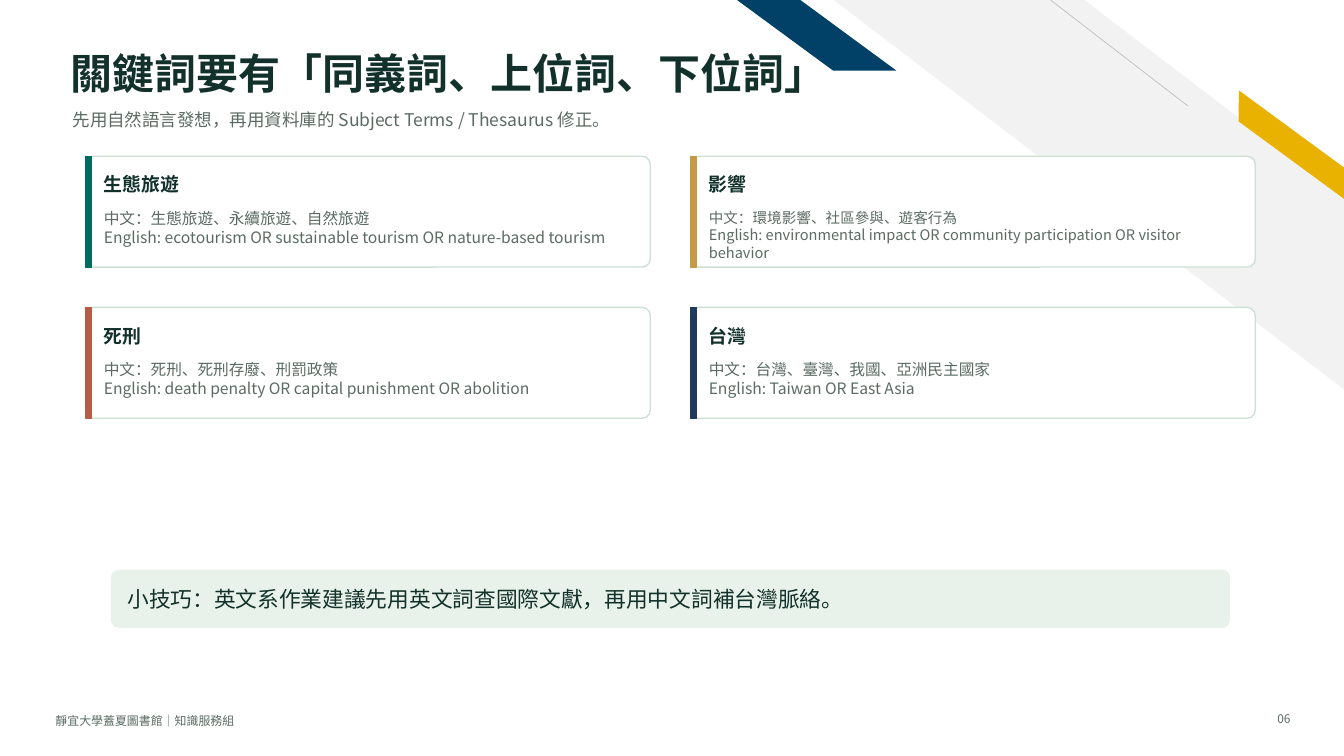
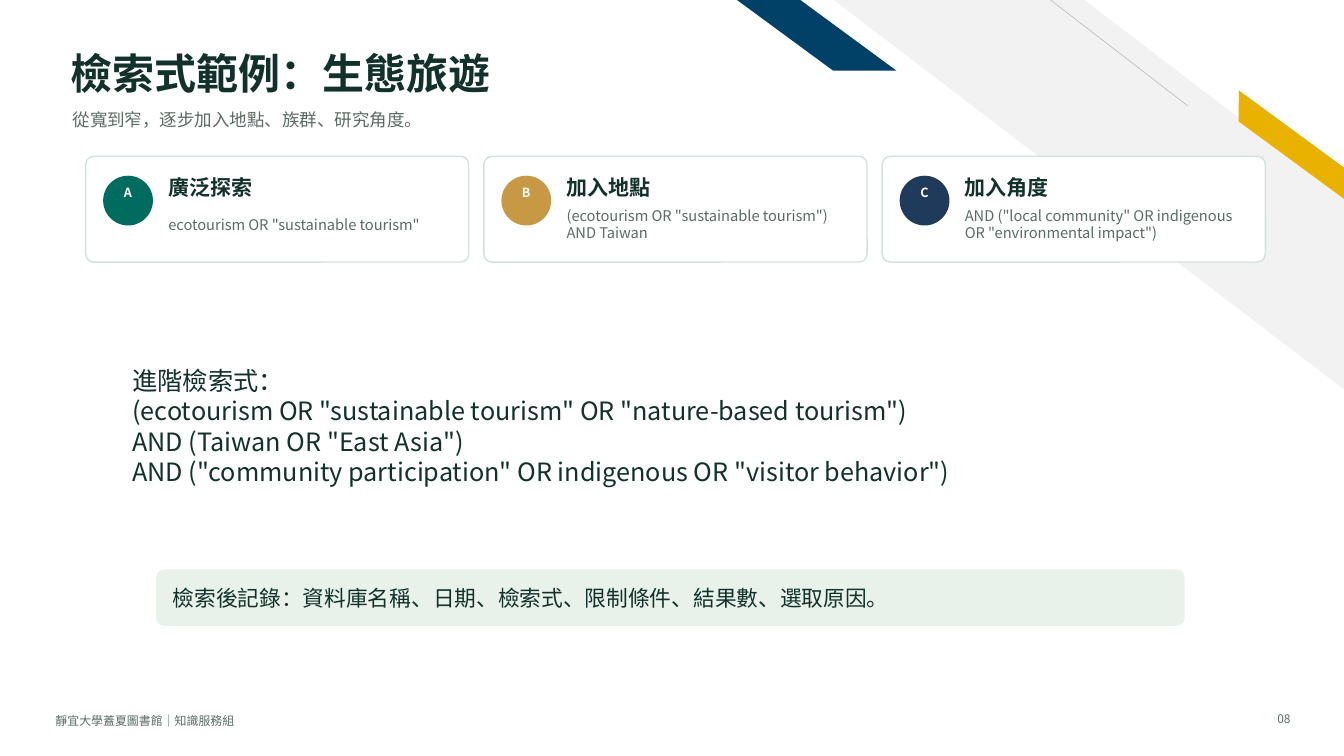
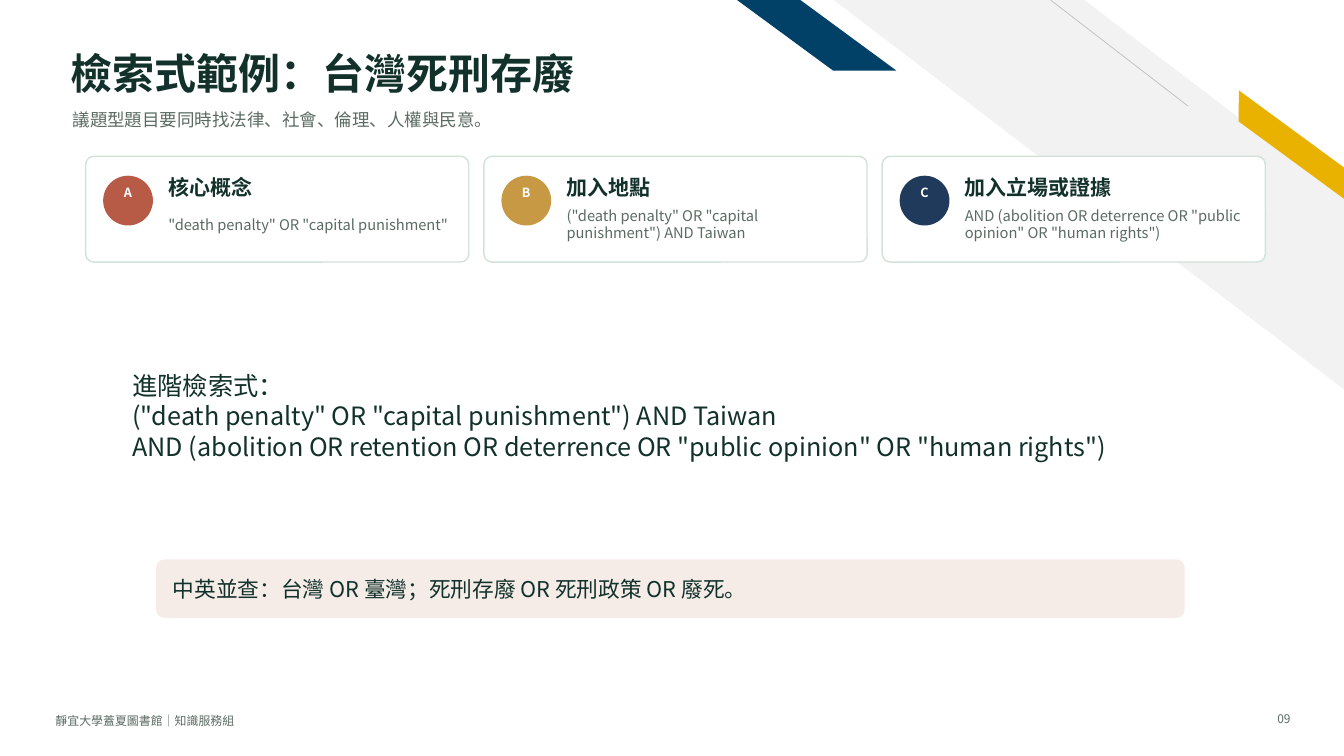
"""Build three slides on search keywords and example search expressions."""
from dataclasses import dataclass

from lxml.etree import SubElement
from pptx import Presentation
from pptx.dml.color import RGBColor
from pptx.enum.shapes import MSO_CONNECTOR, MSO_SHAPE, PP_PLACEHOLDER
from pptx.enum.text import MSO_ANCHOR, MSO_AUTO_SIZE, PP_ALIGN
from pptx.oxml.ns import qn
from pptx.shapes.autoshape import Shape
from pptx.slide import Slide
from pptx.util import Emu, Pt

PX = 9144
FONT = "Noto Sans CJK SC"
FOOTER = "靜宜大學蓋夏圖書館｜知識服務組"
RADIUS = 8

INK = RGBColor(0x12, 0x31, 0x2B)
MUTED = RGBColor(0x5B, 0x6B, 0x63)
WHITE = RGBColor(0xFF, 0xFF, 0xFF)
BORDER = RGBColor(0xCD, 0xE0, 0xD4)
TEAL = RGBColor(0x00, 0x6B, 0x5F)
OCHRE = RGBColor(0xC7, 0x99, 0x44)
BRICK = RGBColor(0xB7, 0x5B, 0x47)
INDIGO = RGBColor(0x1F, 0x3A, 0x5B)
MINT = RGBColor(0xE8, 0xF1, 0xEA)
BLUSH = RGBColor(0xF5, 0xEC, 0xE8)
STRIPE_GREY = RGBColor(0xF2, 0xF2, 0xF2)
HAIRLINE = RGBColor(0xBF, 0xBF, 0xBF)
GOLD = RGBColor(0xEA, 0xB2, 0x00)
NAVY = RGBColor(0x01, 0x40, 0x67)


@dataclass(frozen=True)
class Box:
    """A rectangle in px."""
    left: int
    top: int
    width: int
    height: int

    def emu(self) -> tuple[Emu, Emu, Emu, Emu]:
        """Return the rectangle in EMU."""
        return px(self.left), px(self.top), px(self.width), px(self.height)


@dataclass(frozen=True)
class Style:
    """The look of a text."""
    size: float
    color: RGBColor = INK
    bold: bool = False
    align: PP_ALIGN = PP_ALIGN.LEFT
    anchor: MSO_ANCHOR = MSO_ANCHOR.MIDDLE


@dataclass(frozen=True)
class Keyword:
    """A concept with its search terms in two languages."""
    name: str
    accent: RGBColor
    chinese: str
    english: str
    size: float = 11.2


@dataclass(frozen=True)
class Step:
    """One step of a search."""
    name: str
    accent: RGBColor
    terms: str


@dataclass(frozen=True)
class Callout:
    """A tinted strip with a tip."""
    text: str
    box: Box
    fill: RGBColor


@dataclass(frozen=True)
class Example:
    """The content of a slide with an example search."""
    title: str
    subtitle: str
    number: str
    steps: tuple[Step, ...]
    query: tuple[str, ...]
    query_height: int
    callout: Callout


TITLE = Style(30, bold=True)
SUBTITLE = Style(12.5, MUTED)
KEYWORD_NAME = Style(13.5, bold=True)
STEP_NAME = Style(15, bold=True)
STEP_TERMS = Style(10.5, MUTED)
BADGE = Style(9, WHITE, bold=True, align=PP_ALIGN.CENTER)
QUERY = Style(18)
TIP = Style(15.5)
FOOTNOTE = Style(8.5, MUTED)
PAGE_NUMBER = Style(8.5, MUTED, align=PP_ALIGN.RIGHT)

KEYWORDS = (
    Keyword("生態旅遊", TEAL, "中文：生態旅遊、永續旅遊、自然旅遊",
            "English: ecotourism OR sustainable tourism OR nature-based tourism"),
    Keyword("影響", OCHRE, "中文：環境影響、社區參與、遊客行為",
            "English: environmental impact OR community participation OR visitor behavior", 10.4),
    Keyword("死刑", BRICK, "中文：死刑、死刑存廢、刑罰政策",
            "English: death penalty OR capital punishment OR abolition"),
    Keyword("台灣", INDIGO, "中文：台灣、臺灣、我國、亞洲民主國家",
            "English: Taiwan OR East Asia"),
)
KEYWORD_TIP = Callout("小技巧：英文系作業建議先用英文詞查國際文獻，再用中文詞補台灣脈絡。",
                      Box(110, 565, 1110, 58), MINT)

EXAMPLES = (
    Example(
        "檢索式範例：生態旅遊", "從寬到窄，逐步加入地點、族群、研究角度。", "08",
        (Step("廣泛探索", TEAL, 'ecotourism OR "sustainable tourism"'),
         Step("加入地點", OCHRE, '(ecotourism OR "sustainable tourism") AND Taiwan'),
         Step("加入角度", INDIGO,
              'AND ("local community" OR indigenous OR "environmental impact")')),
        ("進階檢索式：",
         '(ecotourism OR "sustainable tourism" OR "nature-based tourism")',
         'AND (Taiwan OR "East Asia")',
         'AND ("community participation" OR indigenous OR "visitor behavior")'),
        175,
        Callout("檢索後記錄：資料庫名稱、日期、檢索式、限制條件、結果數、選取原因。",
                Box(155, 565, 1020, 56), MINT)),
    Example(
        "檢索式範例：台灣死刑存廢", "議題型題目要同時找法律、社會、倫理、人權與民意。", "09",
        (Step("核心概念", BRICK, '"death penalty" OR "capital punishment"'),
         Step("加入地點", OCHRE, '("death penalty" OR "capital punishment") AND Taiwan'),
         Step("加入立場或證據", INDIGO,
              'AND (abolition OR deterrence OR "public opinion" OR "human rights")')),
        ("進階檢索式：",
         '("death penalty" OR "capital punishment") AND Taiwan',
         'AND (abolition OR retention OR deterrence OR "public opinion" OR "human rights")'),
        155,
        Callout("中英並查：台灣 OR 臺灣；死刑存廢 OR 死刑政策 OR 廢死。",
                Box(155, 555, 1020, 58), BLUSH)),
)


def px(length: int) -> Emu:
    """Turn px into EMU."""
    return Emu(length * PX)


def write(target: Shape, lines: tuple[str, ...], style: Style,
          side: int = 0, bottom: int = 0) -> None:
    """Fill a shape with one styled paragraph per line."""
    frame = target.text_frame
    frame.auto_size = MSO_AUTO_SIZE.NONE
    frame.word_wrap = True
    frame.vertical_anchor = style.anchor
    frame.margin_left = frame.margin_right = px(side)
    frame.margin_top, frame.margin_bottom = 0, px(bottom)
    frame.text = "\n".join(lines)
    for paragraph in frame.paragraphs:
        paragraph.alignment = style.align
        font = paragraph.font
        font.size, font.bold, font.name = Pt(style.size), style.bold, FONT
        font.color.rgb = style.color
        defaults = paragraph._p.pPr.find(qn("a:defRPr"))
        SubElement(defaults, qn("a:ea")).set("typeface", FONT)


def add_text(slide: Slide, box: Box, style: Style, *lines: str) -> None:
    """Add a text box without margins."""
    write(slide.shapes.add_textbox(*box.emu()), lines, style)


def add_block(slide: Slide, kind: MSO_SHAPE, box: Box, fill: RGBColor,
              outline: RGBColor | None = None, adjust: float | None = None) -> Shape:
    """Add a flat preset shape."""
    block = slide.shapes.add_shape(kind, *box.emu())
    block.shadow.inherit = False
    block.fill.solid()
    block.fill.fore_color.rgb = fill
    if outline is None:
        block.line.fill.background()
    else:
        block.line.color.rgb = outline
        block.line.width = Pt(1)
    if adjust is not None:
        block.adjustments[0] = adjust
    return block


def add_panel(slide: Slide, box: Box, fill: RGBColor,
              outline: RGBColor | None = None) -> Shape:
    """Add a panel whose corners have the shared radius."""
    return add_block(slide, MSO_SHAPE.ROUNDED_RECTANGLE, box, fill, outline,
                     RADIUS / min(box.width, box.height))


def add_backdrop(slide: Slide) -> None:
    """Draw the corner stripes and hand them to the layout that all slides share."""
    stripe = add_block(slide, MSO_SHAPE.DIAGONAL_STRIPE, Box(827, 0, 507, 387),
                       STRIPE_GREY, adjust=0.51)
    hairline = slide.shapes.add_connector(
        MSO_CONNECTOR.STRAIGHT, px(1178), px(105), px(1042), px(0))
    hairline.line.color.rgb = HAIRLINE
    hairline.line.width = Pt(0.5)
    SubElement(hairline.element.spPr, qn("a:effectLst"))
    gold_band = add_block(slide, MSO_SHAPE.PARALLELOGRAM, Box(1207, 131, 148, 25),
                          GOLD, adjust=0.72)
    gold_band.rotation = 36.3
    navy_band = add_block(slide, MSO_SHAPE.PARALLELOGRAM, Box(731, 0, 158, 70),
                          NAVY, adjust=1.36)
    for band in (stripe, gold_band, navy_band):
        band.element.spPr.xfrm.set("flipH", "1")
    layout = slide.slide_layout
    for holder in list(layout.placeholders):
        if holder.placeholder_format.type != PP_PLACEHOLDER.TITLE:
            layout.shapes.element.remove(holder.element)
    for part in (stripe, hairline, gold_band, navy_band):
        layout.shapes.element.append(part.element)


def add_frame(slide: Slide, title: str, subtitle: str, number: str) -> None:
    """Set the title, subtitle, footer and page number."""
    heading = slide.shapes.title
    heading.left, heading.top, heading.width, heading.height = Box(70, 45, 1180, 55).emu()
    write(heading, (title,), TITLE)
    add_text(slide, Box(72, 105, 1090, 28), SUBTITLE, subtitle)
    add_text(slide, Box(55, 705, 520, 20), FOOTNOTE, FOOTER)
    add_text(slide, Box(1235, 702, 45, 22), PAGE_NUMBER, number)


def add_keyword(slide: Slide, index: int, keyword: Keyword) -> None:
    """Add a keyword card at its place in the two-column grid."""
    row, column = divmod(index, 2)
    left, top = 85 + 600 * column, 155 + 150 * row
    add_panel(slide, Box(left, top, 560, 110), WHITE, BORDER)
    add_block(slide, MSO_SHAPE.RECTANGLE, Box(left, top, 6, 110),
              keyword.accent, keyword.accent)
    add_text(slide, Box(left + 18, top + 16, 528, 24), KEYWORD_NAME, keyword.name)
    add_text(slide, Box(left + 18, top + 52, 528, 45),
             Style(keyword.size, MUTED, anchor=MSO_ANCHOR.TOP),
             keyword.chinese, keyword.english)


def add_step(slide: Slide, index: int, step: Step) -> None:
    """Add a lettered step card at its place in the row."""
    left, top = 85 + 395 * index, 155
    card = add_panel(slide, Box(left, top, 380, 105), WHITE, BORDER)
    border_color = card.element.spPr.find(f"{qn('a:ln')}//{qn('a:srgbClr')}")
    SubElement(border_color, qn("a:alpha")).set("val", "90000")
    badge = add_block(slide, MSO_SHAPE.OVAL, Box(left + 18, top + 20, 48, 48),
                      step.accent, step.accent)
    write(badge, ("ABC"[index],), BADGE, bottom=16)
    add_text(slide, Box(left + 82, top + 18, 280, 25), STEP_NAME, step.name)
    add_text(slide, Box(left + 82, top + 50, 280, 35), STEP_TERMS, step.terms)


def add_callout(slide: Slide, callout: Callout) -> None:
    """Add the tinted tip strip."""
    write(add_panel(slide, callout.box, callout.fill), (callout.text,), TIP, side=14)


def add_example(slide: Slide, example: Example) -> None:
    """Fill a slide with an example search."""
    add_frame(slide, example.title, example.subtitle, example.number)
    for index, step in enumerate(example.steps):
        add_step(slide, index, step)
    query_panel = add_panel(slide, Box(115, 335, 1100, example.query_height), WHITE)
    write(query_panel, example.query, QUERY, side=14)
    add_callout(slide, example.callout)


def main() -> None:
    """Build and save the presentation."""
    deck = Presentation()
    deck.slide_width, deck.slide_height = px(1333), px(750)
    title_only = deck.slide_layouts[5]

    keyword_slide = deck.slides.add_slide(title_only)
    add_backdrop(keyword_slide)
    add_frame(keyword_slide, "關鍵詞要有「同義詞、上位詞、下位詞」",
              "先用自然語言發想，再用資料庫的 Subject Terms / Thesaurus 修正。", "06")
    for index, keyword in enumerate(KEYWORDS):
        add_keyword(keyword_slide, index, keyword)
    add_callout(keyword_slide, KEYWORD_TIP)

    for example in EXAMPLES:
        add_example(deck.slides.add_slide(title_only), example)
    deck.save("out.pptx")


if __name__ == "__main__":
    main()
